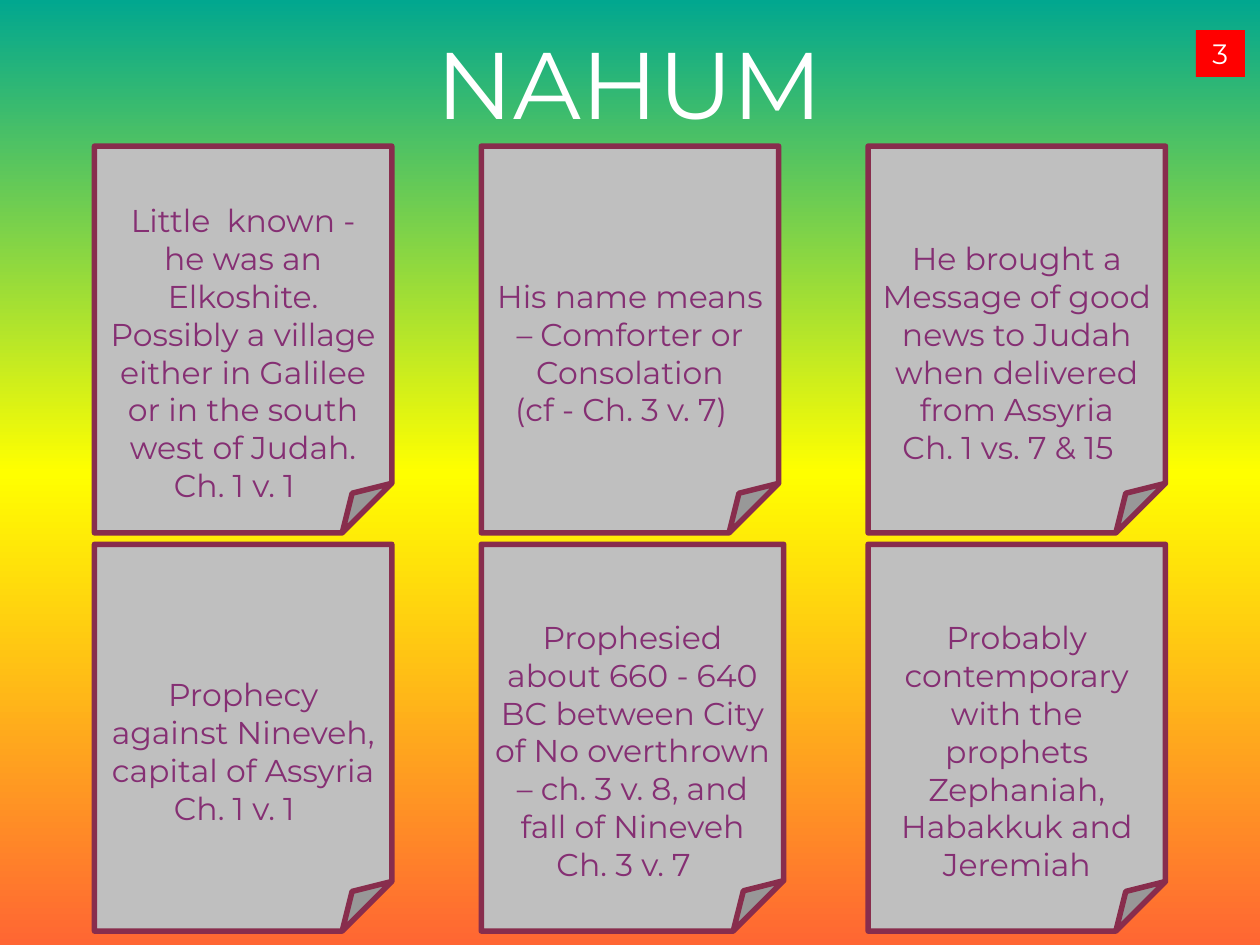
from copy import deepcopy

from lxml import etree
from pptx import Presentation
from pptx.dml.color import RGBColor
from pptx.enum.shapes import MSO_SHAPE
from pptx.enum.text import MSO_ANCHOR, PP_ALIGN
from pptx.oxml.ns import qn
from pptx.util import Inches, Pt

FOLDED_CORNER = MSO_SHAPE.FOLDED_CORNER
RECTANGLE = MSO_SHAPE.RECTANGLE
CENTER = PP_ALIGN.CENTER
TOP = MSO_ANCHOR.TOP
MIDDLE = MSO_ANCHOR.MIDDLE

THEME = {
    "font": "Montserrat",
    "title_size": 54,
    "card_size": 18,
    "badge_size": 16,
    "white": RGBColor.from_string("FFFFFF"),
    "card_fill": RGBColor.from_string("BFBFBF"),
    "card_line": RGBColor.from_string("882D4D"),
    "card_text": RGBColor.from_string("852F73"),
    "badge_fill": RGBColor.from_string("FF0000"),
    "sky": ["01A78F", "FFFF00", "FF6633"],
}

GRID_LEFT, GRID_TOP = 0.75, 1.16
COLUMN_PITCH, ROW_PITCH = 3.07, 3.16
CARD_WIDTH, CARD_HEIGHT = 2.36, 3.07
WIDE_CARD_WIDTH = 2.4
CARD_TOP_INSET = 0.65
REFERENCE_INDENT = 0.14

CARDS = [
    [
        ["Little  known - he was an Elkoshite. Possibly a village either in "
         "Galilee or in the south west of Judah.", "Ch. 1 v. 1"],
        ["His name means – Comforter or Consolation", "(cf - Ch. 3 v. 7)"],
        ["He brought a Message of good news to Judah when delivered from Assyria",
         "Ch. 1 vs. 7 & 15"],
    ],
    [
        ["Prophecy against Nineveh, capital of Assyria", "Ch. 1 v. 1"],
        ["Prophesied about 660 - 640 BC between City of No overthrown "
         "– ch. 3 v. 8, and fall of Nineveh", "Ch. 3 v. 7"],
        ["Probably contemporary with the prophets Zephaniah, Habakkuk and Jeremiah"],
    ],
]


def write_text(shape, lines, size, color, anchor):
    text_frame = shape.text_frame
    text_frame.word_wrap = True
    text_frame.vertical_anchor = anchor
    text_frame.text = "\n".join(lines)
    for paragraph in text_frame.paragraphs:
        paragraph.alignment = CENTER
        for run in paragraph.runs:
            run.font.name = THEME["font"]
            run.font.size = Pt(size)
            run.font.color.rgb = color


def add_panel(kind, left, top, width, height, fill):
    shape = slide.shapes.add_shape(
        kind, Inches(left), Inches(top), Inches(width), Inches(height))
    shape.shadow.inherit = False
    shape.fill.solid()
    shape.fill.fore_color.rgb = fill
    shape.line.fill.background()
    return shape


presentation = Presentation()
presentation.slide_width = Inches(10)
presentation.slide_height = Inches(7.5)
slide = presentation.slides.add_slide(presentation.slide_layouts[6])

sky = slide.background.fill
sky.gradient()
sky.gradient_angle = 270
stop_list = slide.element.find(".//" + qn("a:gsLst"))
stop_list.append(deepcopy(stop_list[0]))
for index, (stop, color) in enumerate(zip(sky.gradient_stops, THEME["sky"])):
    stop.position = index / 2
    stop.color.rgb = RGBColor.from_string(color)

title = slide.shapes.add_textbox(0, Inches(0.15), presentation.slide_width, Inches(1.01))
write_text(title, ["NAHUM"], THEME["title_size"], THEME["white"], TOP)

for row, row_cards in enumerate(CARDS):
    for column, lines in enumerate(row_cards):
        width = WIDE_CARD_WIDTH if (row, column) == (1, 1) else CARD_WIDTH
        card = add_panel(
            FOLDED_CORNER, GRID_LEFT + column * COLUMN_PITCH,
            GRID_TOP + row * ROW_PITCH, width, CARD_HEIGHT, THEME["card_fill"])
        card.line.color.rgb = THEME["card_line"]
        card.line.width = Pt(3.15)
        etree.SubElement(card.element.spPr.find(qn("a:ln")), qn("a:round"))
        write_text(card, lines, THEME["card_size"], THEME["card_text"], MIDDLE)
        card.text_frame.margin_top = Inches(CARD_TOP_INSET)
        for reference in card.text_frame.paragraphs[1:]:
            properties = reference._p.get_or_add_pPr()
            properties.set("marR", str(Inches(REFERENCE_INDENT)))

badge = add_panel(RECTANGLE, 9.49, 0.24, 0.39, 0.37, THEME["badge_fill"])
write_text(badge, ["3"], THEME["badge_size"], THEME["white"], TOP)

presentation.save("out.pptx")
